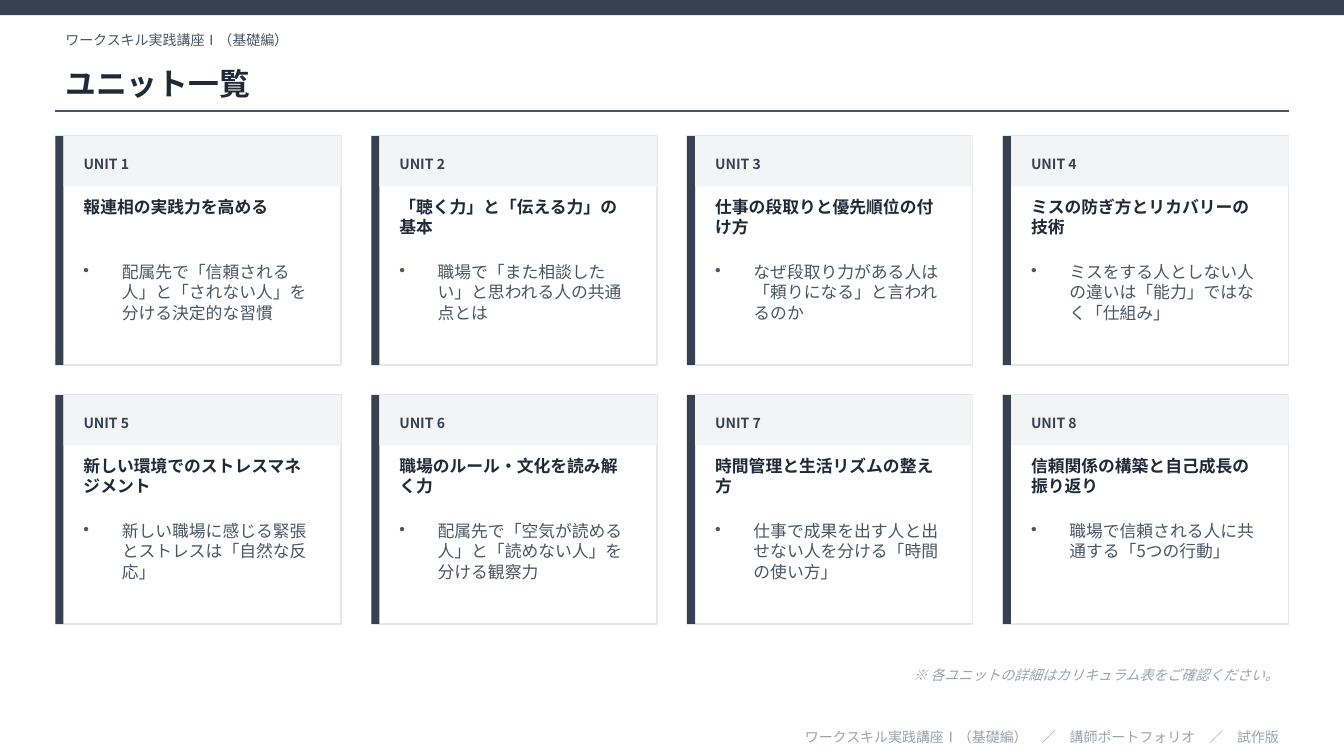
from dataclasses import dataclass

from lxml import etree
from pptx import Presentation
from pptx.dml.color import RGBColor
from pptx.enum.shapes import MSO_CONNECTOR, MSO_SHAPE
from pptx.enum.text import MSO_ANCHOR, PP_ALIGN
from pptx.oxml.ns import qn
from pptx.slide import Slide
from pptx.util import Inches, Pt

RECTANGLE = MSO_SHAPE.RECTANGLE
STRAIGHT = MSO_CONNECTOR.STRAIGHT
TOP, MIDDLE = MSO_ANCHOR.TOP, MSO_ANCHOR.MIDDLE
LEFT, RIGHT = PP_ALIGN.LEFT, PP_ALIGN.RIGHT


@dataclass(frozen=True)
class Theme:
    font: str = "Noto Sans CJK JP"
    white: str = "FFFFFF"
    accent: str = "374151"
    heading: str = "1F2937"
    body: str = "4B5563"
    muted: str = "9CA3AF"
    border: str = "E5E7EB"
    band: str = "F3F4F6"
    small_size: int = 10
    card_size: int = 12
    title_size: int = 22


@dataclass(frozen=True)
class Box:
    left: float
    top: float
    width: float
    height: float

    def lengths(self) -> tuple:
        return tuple(Inches(v) for v in (self.left, self.top, self.width, self.height))


@dataclass(frozen=True)
class Unit:
    title: str
    point: str


THEME = Theme()
COURSE = "ワークスキル実践講座Ⅰ（基礎編）"
SLIDE_WIDTH, SLIDE_HEIGHT = 13.33, 7.5
MARGIN, CONTENT_WIDTH = 0.55, 12.23

# Card grid
COLUMNS, GAP, GRID_TOP, CARD_HEIGHT = 4, 0.3, 1.35, 2.27
CARD_WIDTH = (CONTENT_WIDTH - GAP * (COLUMNS - 1)) / COLUMNS
STRIPE_WIDTH, BULLET_INDENT = 0.08, 0.38

UNITS = [
    Unit("報連相の実践力を高める", "配属先で「信頼される人」と「されない人」を分ける決定的な習慣"),
    Unit("「聴く力」と「伝える力」の基本", "職場で「また相談したい」と思われる人の共通点とは"),
    Unit("仕事の段取りと優先順位の付け方", "なぜ段取り力がある人は「頼りになる」と言われるのか"),
    Unit("ミスの防ぎ方とリカバリーの技術", "ミスをする人としない人の違いは「能力」ではなく「仕組み」"),
    Unit("新しい環境でのストレスマネジメント", "新しい職場に感じる緊張とストレスは「自然な反応」"),
    Unit("職場のルール・文化を読み解く力", "配属先で「空気が読める人」と「読めない人」を分ける観察力"),
    Unit("時間管理と生活リズムの整え方", "仕事で成果を出す人と出せない人を分ける「時間の使い方」"),
    Unit("信頼関係の構築と自己成長の振り返り", "職場で信頼される人に共通する「5つの行動」"),
]


def add_rectangle(slide: Slide, box: Box, fill: str, border: str = "") -> None:
    shape = slide.shapes.add_shape(RECTANGLE, *box.lengths())
    shape.shadow.inherit = False
    shape.fill.solid()
    shape.fill.fore_color.rgb = RGBColor.from_string(fill)
    if border:
        shape.line.color.rgb = RGBColor.from_string(border)
        shape.line.width = Pt(1)
    else:
        shape.line.fill.background()


def add_text(slide: Slide, box: Box, text: str, *, color: str,
             size: int = THEME.small_size, bold: bool = False, italic: bool = False,
             align: PP_ALIGN = LEFT, anchor: MSO_ANCHOR = MIDDLE,
             bullet: bool = False) -> None:
    frame = slide.shapes.add_textbox(*box.lengths()).text_frame
    frame.word_wrap = True
    frame.vertical_anchor = anchor
    paragraph = frame.paragraphs[0]
    if bullet:
        properties = paragraph._p.get_or_add_pPr()
        properties.set("marL", str(Inches(BULLET_INDENT)))
        properties.set("indent", str(-Inches(BULLET_INDENT)))
        etree.SubElement(properties, qn("a:buChar")).set("char", "•")
        paragraph.space_after = Pt(3)
    paragraph.alignment = align
    run = paragraph.add_run()
    run.text = text
    font = run.font
    font.name = THEME.font
    font.size = Pt(size)
    font.bold = bold
    font.italic = italic
    font.color.rgb = RGBColor.from_string(color)
    # Japanese glyphs take the East Asian typeface
    east_asian = etree.SubElement(run._r.get_or_add_rPr(), qn("a:ea"))
    east_asian.set("typeface", THEME.font)


def add_rule(slide: Slide, top: float) -> None:
    rule = slide.shapes.add_connector(STRAIGHT, Inches(MARGIN), Inches(top),
                                      Inches(MARGIN + CONTENT_WIDTH), Inches(top))
    rule.line.color.rgb = RGBColor.from_string(THEME.body)
    rule.line.width = Pt(1)
    etree.SubElement(rule._element.spPr, qn("a:effectLst"))


def add_card(slide: Slide, index: int, unit: Unit) -> None:
    row, column = divmod(index, COLUMNS)
    left = MARGIN + column * (CARD_WIDTH + GAP)
    top = GRID_TOP + row * (CARD_HEIGHT + GAP)
    inner = left + STRIPE_WIDTH
    text_left, text_width = inner + 0.1, CARD_WIDTH - 0.36

    # Frame, side stripe and header band
    add_rectangle(slide, Box(left, top, CARD_WIDTH, CARD_HEIGHT), THEME.white, THEME.border)
    add_rectangle(slide, Box(left, top, STRIPE_WIDTH, CARD_HEIGHT), THEME.accent)
    add_rectangle(slide, Box(inner, top, CARD_WIDTH - STRIPE_WIDTH, 0.5), THEME.band)

    # Number, title and key point
    add_text(slide, Box(text_left, top + 0.08, 0.95, 0.4), f"UNIT {index + 1}",
             color=THEME.accent, bold=True)
    add_text(slide, Box(text_left, top + 0.55, text_width, 0.6), unit.title,
             color=THEME.heading, size=THEME.card_size, bold=True, anchor=TOP)
    add_text(slide, Box(text_left, top + 1.2, text_width, 0.97), unit.point,
             color=THEME.body, size=THEME.card_size, anchor=TOP, bullet=True)


def main() -> None:
    presentation = Presentation()
    presentation.slide_width = Inches(SLIDE_WIDTH)
    presentation.slide_height = Inches(SLIDE_HEIGHT)
    slide = presentation.slides.add_slide(presentation.slide_layouts[6])
    slide.background.fill.solid()
    slide.background.fill.fore_color.rgb = RGBColor.from_string(THEME.white)

    # Header
    add_rectangle(slide, Box(0, 0, SLIDE_WIDTH, 0.15), THEME.accent)
    add_text(slide, Box(MARGIN, 0.25, CONTENT_WIDTH, 0.3), COURSE, color=THEME.body)
    add_text(slide, Box(MARGIN, 0.55, CONTENT_WIDTH, 0.55), "ユニット一覧",
             color=THEME.heading, size=THEME.title_size, bold=True)
    add_rule(slide, 1.1)

    # Unit cards
    for index, unit in enumerate(UNITS):
        add_card(slide, index, unit)

    # Note and footer
    add_text(slide, Box(MARGIN, 6.55, CONTENT_WIDTH, 0.3),
             "※ 各ユニットの詳細はカリキュラム表をご確認ください。",
             color=THEME.muted, italic=True, align=RIGHT)
    add_text(slide, Box(MARGIN, 7.2, CONTENT_WIDTH, 0.22),
             f"{COURSE}　／　講師ポートフォリオ　／　試作版",
             color=THEME.muted, align=RIGHT)

    presentation.save("out.pptx")


if __name__ == "__main__":
    main()
